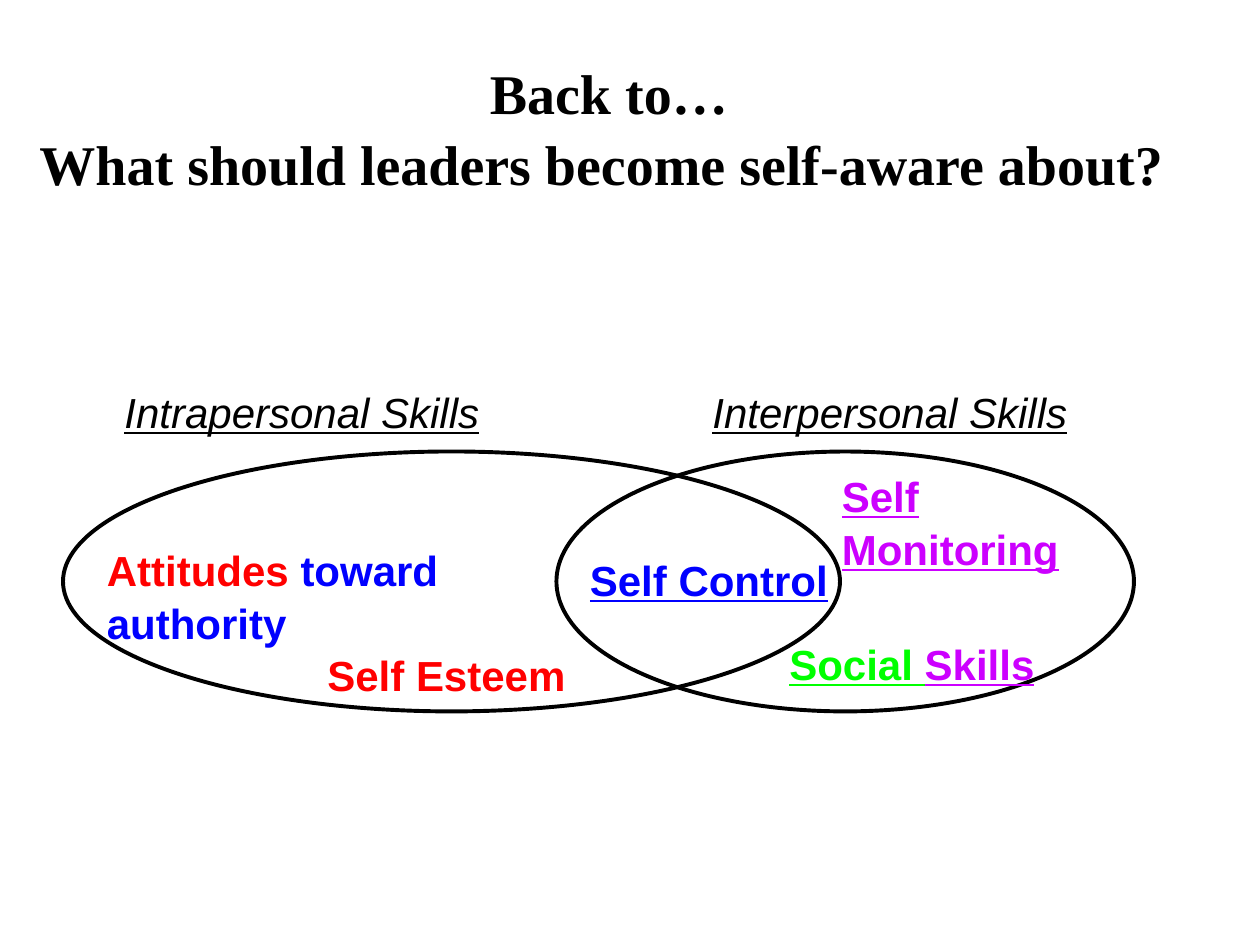
import pptx
import pptx.dml.color
import pptx.enum.shapes
import pptx.enum.text
import pptx.util

COLORS = {"black": "000000", "blue": "0000FF", "red": "FF0000",
          "green": "00FF00", "violet": "CC00FF"}
COLUMNS, ROWS = 120, 90
ALIGN = pptx.enum.text.PP_ALIGN
HEADING = {"italic": True, "underline": True}
SKILL = {"bold": True}
LINKED = {"bold": True, "underline": True}


class SkillsSlide:
    """Draws titles, ellipses and labels on one slide in a shared style."""

    def __init__(self, deck):
        self.column = deck.slide_width / COLUMNS
        self.row = deck.slide_height / ROWS
        self.page = deck.slides.add_slide(deck.slide_layouts[6])

    def place(self, left, top, width, height):
        return (round(left * self.column), round(top * self.row),
                round(width * self.column), round(height * self.row))

    def color(self, name):
        return pptx.dml.color.RGBColor.from_string(COLORS[name])

    def text(self, area, lines, style, align=ALIGN.LEFT, size=24, font="Arial"):
        box = self.page.shapes.add_textbox(*self.place(*area))
        frame = box.text_frame
        frame.word_wrap = True
        for index, line in enumerate(lines):
            para = frame.add_paragraph() if index else frame.paragraphs[0]
            para.alignment = align
            para.line_spacing = 1.05
            for words, color in line:
                span = para.add_run()
                span.text = words
                values = {"name": font, "size": pptx.util.Pt(size), **style}
                for key, value in values.items():
                    setattr(span.font, key, value)
                span.font.color.rgb = self.color(color)
        return box

    def title(self, area, lines):
        spans = [[(line, "black")] for line in lines]
        box = self.text(area, spans, {"bold": True}, ALIGN.CENTER, 32, "Times New Roman")
        box.text_frame.vertical_anchor = pptx.enum.text.MSO_ANCHOR.MIDDLE

    def heading(self, left, words):
        self.text((left, 36, 43.5, 6), [[(words, "black")]], HEADING, ALIGN.CENTER)

    def ellipse(self, left, width):
        oval = self.page.shapes.add_shape(
            pptx.enum.shapes.MSO_SHAPE.OVAL, *self.place(left, 43, width, 24.75))
        oval.shadow.inherit = False
        oval.fill.background()
        oval.line.color.rgb = self.color("black")
        oval.line.width = pptx.util.Pt(2.25)


def main():
    deck = pptx.Presentation()
    deck.slide_width = pptx.util.Inches(10)
    deck.slide_height = pptx.util.Inches(7.5)
    slide = SkillsSlide(deck)
    slide.title((0, 6, 116, 12), ["Back to…", "What should leaders become self-aware about? "])
    for left, width in ((6, 74), (53, 55)):
        slide.ellipse(left, width)
    for left, words in ((7, "Intrapersonal Skills"), (63, "Interpersonal Skills")):
        slide.heading(left, words)
    skills = [
        ((55, 52, 30, 6), [[("Self Control", "blue")]], LINKED),
        ((79, 44, 30, 11), [[("Self Monitoring", "violet")]], LINKED),
        ((74, 60, 30, 6), [[("Social ", "green"), ("Skills", "violet")]], LINKED),
        ((30, 61, 30, 6), [[("Self Esteem", "red")]], SKILL),
        ((9, 51, 53, 11), [[("Attitudes ", "red"), ("toward", "blue")],
                           [("authority", "blue")]], SKILL),
    ]
    for area, lines, style in skills:
        slide.text(area, lines, style)
    deck.save("out.pptx")


if __name__ == "__main__":
    main()
